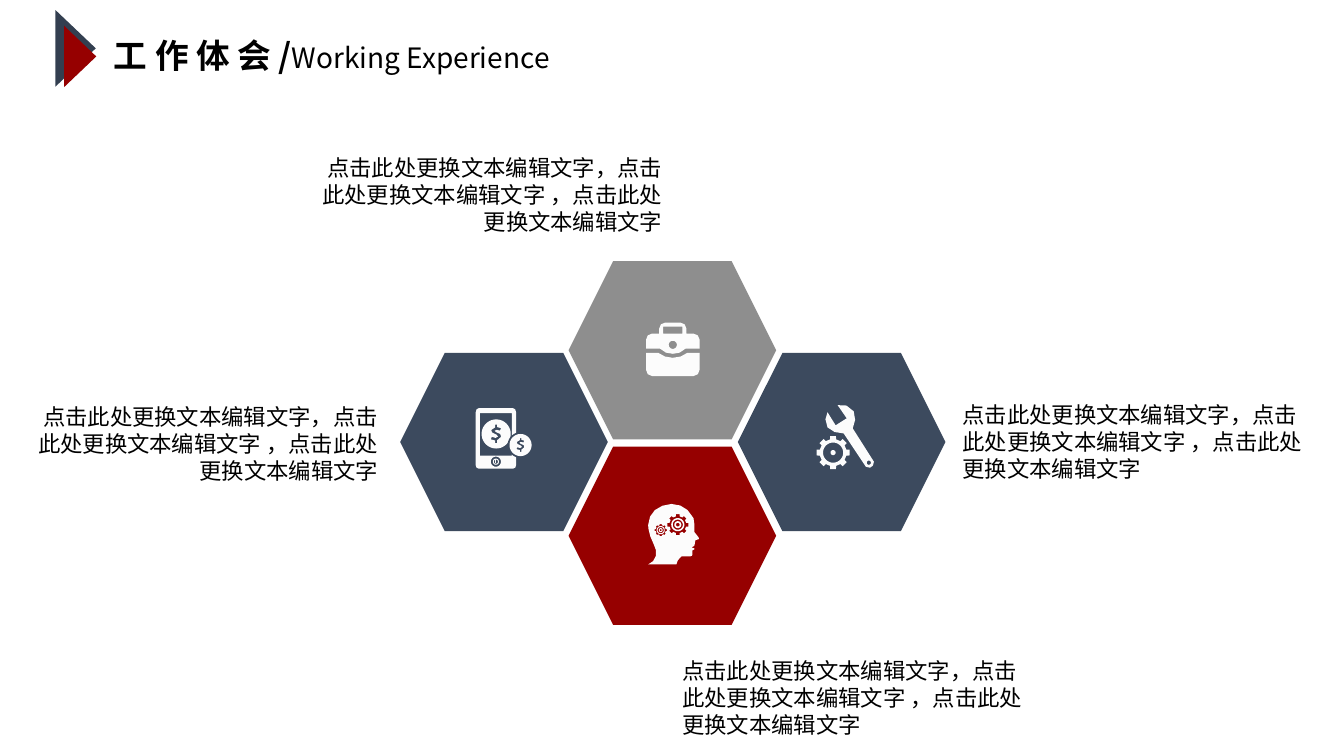
from math import cos, pi, sin

from pptx import Presentation
from pptx import util as u
from pptx.dml.color import RGBColor
from pptx.enum import shapes, text
from pptx.oxml.ns import qn

FONT = "Noto Sans CJK SC"
NAVY, RED, GREY, WHITE, BLACK = "3C4A5E", "960000", "8E8E8E", "FCFCFC", "000000"
HEXAGON_WIDTH, HEXAGON_HEIGHT = 148.32, 127.44
CAPTION = "点击此处更换文本编辑文字，点击此处更换文本编辑文字 ，点击此处更换文本编辑文字"

# Outlines are in points from the icon's top left corner.
HEAD = [(36, 23.8), (33.1, 20.2), (33.1, 15.1), (32.4, 10.1), (28.1, 4.3),
        (22.9, 1.1), (16.6, 0), (10.2, 1.3), (4.8, 4.4), (1.4, 9), (0, 15.1),
        (0.3, 18), (1.6, 23.2), (4.3, 29.5), (5.6, 33), (5.6, 37), (3.6, 40.8),
        (0, 43.2), (20.2, 43.2), (21.2, 40.3), (23.8, 37.4), (30.2, 37.4),
        (31.5, 36.9), (31.7, 33.1), (33.1, 32.4), (33.1, 31.7), (31, 31),
        (32.6, 30.2), (33.1, 29.5), (33.8, 25.9), (36.3, 25.1)]
WRENCH = [(41, 41.8), (25.9, 18), (27.6, 11.9), (26.6, 5.8), (21.4, 1.7),
          (15.1, 1.4), (21.6, 10.8), (13.7, 15.8), (7.9, 6.5), (6.4, 11.5),
          (7.9, 17.3), (13, 20.6), (19.4, 21.6), (35.3, 45.4), (38.2, 46.1),
          (40.3, 44.6)]
CASE_WIDTH = 38.2
CASE_TOP_HALF = [(19.1, 22.3), (14.2, 21.5), (10.1, 18.7), (0, 18.7), (0, 12.2),
                 (1.2, 9.2), (4.3, 7.9), (9.4, 7.9), (9.4, 4.3), (10.6, 1.3),
                 (13.7, 0)]
CASE_BOTTOM_HALF = [(19.1, 25.2), (13.5, 24.3), (8.6, 21.6), (0, 21.6),
                    (0, 33.8), (1.2, 36.9), (4.3, 38.2)]
PHONE_WIDTH = 28.8
PHONE_HALF = [(14.4, 0), (2.2, 0), (0.6, 0.8), (0, 2.9), (0, 40.8),
              (0.6, 42.5), (2.2, 43.2)]
# Dollar sign around its centre, in coin radii.
DOLLAR = [(0.07, 0.43), (0.07, 0.63), (-0.07, 0.63), (-0.07, 0.45),
          (-0.37, 0.37), (-0.3, 0.2), (-0.03, 0.27), (0.13, 0.17),
          (0.02, 0.05), (-0.28, -0.1), (-0.34, -0.27), (-0.07, -0.45),
          (-0.07, -0.63), (0.07, -0.63), (0.07, -0.47), (0.33, -0.4),
          (0.27, -0.23), (0.03, -0.28), (-0.1, -0.22), (0, -0.12),
          (0.28, 0), (0.34, 0.2)]


def rgb(color):
    return RGBColor.from_string(color)


def paint(shape, color):
    shape.shadow.inherit = False
    shape.fill.solid()
    shape.fill.fore_color.rgb = rgb(color)
    shape.line.fill.background()


def add_preset(slide, kind, left, top, width, height, color, rotation=0):
    shape = slide.shapes.add_shape(kind, u.Pt(left), u.Pt(top), u.Pt(width), u.Pt(height))
    shape.rotation = rotation
    paint(shape, color)
    return shape


def add_hexagon(slide, left, top, color):
    hexagon = add_preset(slide, shapes.MSO_SHAPE.HEXAGON, left, top,
                         HEXAGON_WIDTH, HEXAGON_HEIGHT, color, 180)
    hexagon.adjustments[0] = 0.25


def circle(x, y, radius, count=40):
    return [(x + radius * cos(2 * pi * i / count), y + radius * sin(2 * pi * i / count))
            for i in range(count)]


def gear(x, y, radius, root, teeth=8):
    corners = [(-0.28, root), (-0.22, radius), (0.22, radius), (0.28, root)]
    return [(x + r * cos(2 * pi * (i + turn) / teeth), y + r * sin(2 * pi * (i + turn) / teeth))
            for i in range(teeth) for turn, r in corners]


def box(left, top, width, height):
    return [(left, top), (left + width, top),
            (left + width, top + height), (left, top + height)]


def mirrored(half, width):
    return half + [(width - x, y) for x, y in reversed(half)]


def coin(x, y, radius):
    sign = [(x + radius * dx, y + radius * dy) for dx, dy in DOLLAR]
    return [circle(x, y, radius), sign]


def add_icon(slide, left, top, contours, color=WHITE):
    """Draw contours as one shape; a contour inside another is a hole."""
    contours = [[(u.Pt(left + x), u.Pt(top + y)) for x, y in contour] for contour in contours]
    builder = slide.shapes.build_freeform(*contours[0][0])
    for index, contour in enumerate(contours):
        if index:
            builder.move_to(*contour[0])
        builder.add_line_segments(contour[1:], close=True)
    paint(builder.convert_to_shape(), color)


def add_tools(slide, left, top):
    add_icon(slide, left, top, [WRENCH, circle(37.4, 42.5, 1.5)])
    add_icon(slide, left, top, [gear(11.9, 35.3, 11.9, 9.7), circle(11.9, 35.3, 7.2),
                                circle(11.9, 35.3, 1.8)])


def add_head(slide, left, top):
    big = [circle(21.2, 14.8, radius) for radius in (4.7, 3.6, 2.5, 1.3)]
    small = [circle(9, 18.7, radius) for radius in (2.9, 2.2, 1.4, 0.7)]
    add_icon(slide, left, top, [HEAD, gear(21.2, 14.8, 7.6, 6.1), *big,
                                gear(9, 18.7, 4.4, 3.6), *small])


def add_briefcase(slide, left, top):
    add_icon(slide, left, top, [mirrored(CASE_BOTTOM_HALF, CASE_WIDTH)])
    add_icon(slide, left, top, [mirrored(CASE_TOP_HALF, CASE_WIDTH),
                                box(12.2, 2.9, 13.7, 5), circle(19.1, 15.9, 2.9)])


def add_phone(slide, left, top):
    button = [circle(14.4, 38.2, radius) for radius in (3.6, 2.2, 1.5)]
    add_icon(slide, left, top, [mirrored(PHONE_HALF, PHONE_WIDTH),
                                box(2.9, 3.6, 23, 30.2), *button])
    add_icon(slide, left, top, [box(14.05, 36, 0.7, 2.9)])
    add_icon(slide, left, top, coin(14.6, 18.4, 10.4))
    add_icon(slide, left, top, [circle(32, 26.3, 9.2)], NAVY)
    add_icon(slide, left, top, coin(32, 26.3, 7.9))


def format_run(run, size, bold=False):
    run.font.size = u.Pt(size)
    run.font.bold = bold
    run.font.name = FONT
    run.font.color.rgb = rgb(BLACK)
    east_asian = run.font._element.makeelement(qn("a:ea"), {"typeface": FONT})
    run.font._element.find(qn("a:latin")).addnext(east_asian)


def add_title(slide):
    title = slide.shapes.title
    title.left, title.top, title.width, title.height = map(u.Pt, (74.16, 21.6, 447.12, 36.36))
    frame = title.text_frame
    frame.vertical_anchor = text.MSO_ANCHOR.TOP
    frame.auto_size = text.MSO_AUTO_SIZE.SHAPE_TO_FIT_TEXT
    paragraph = frame.paragraphs[0]
    paragraph.alignment = text.PP_ALIGN.LEFT
    for words, size, bold in [("工 作 体 会 /", 24, True), ("Working Experience", 20, False)]:
        run = paragraph.add_run()
        run.text = words
        format_run(run, size, bold)


def add_caption(slide, left, top, alignment):
    caption = slide.shapes.add_textbox(u.Pt(left), u.Pt(top), u.Pt(265.68), u.Pt(65.44))
    frame = caption.text_frame
    frame.word_wrap = True
    frame.auto_size = text.MSO_AUTO_SIZE.SHAPE_TO_FIT_TEXT
    frame.text = CAPTION
    frame.paragraphs[0].alignment = alignment
    format_run(frame.paragraphs[0].runs[0], 16)


def main():
    presentation = Presentation()
    presentation.slide_width, presentation.slide_height = u.Pt(960), u.Pt(540)
    slide = presentation.slides.add_slide(presentation.slide_layouts[5])

    triangle = shapes.MSO_SHAPE.ISOSCELES_TRIANGLE
    add_preset(slide, triangle, 26.64, 20.16, 54.72, 28.8, "333F50", 90)
    add_preset(slide, triangle, 35.28, 28.8, 43.92, 23.04, RED, 90)
    add_title(slide)

    for left, top, color in [(406.08, 186.48, GREY), (527.04, 252, NAVY),
                             (406.08, 318.96, RED), (285.84, 252, NAVY)]:
        add_hexagon(slide, left, top, color)
    add_tools(slide, 583.2, 288)
    add_head(slide, 462.96, 360)
    add_briefcase(slide, 461.52, 230.4)
    add_phone(slide, 339.84, 291.6)

    left_aligned, right_aligned = text.PP_ALIGN.LEFT, text.PP_ALIGN.RIGHT
    for left, top, alignment in [(480.24, 465.84, left_aligned), (214.56, 106.56, right_aligned),
                                 (680.4, 282.96, left_aligned), (11.52, 284.4, right_aligned)]:
        add_caption(slide, left, top, alignment)
    presentation.save("out.pptx")


if __name__ == "__main__":
    main()
